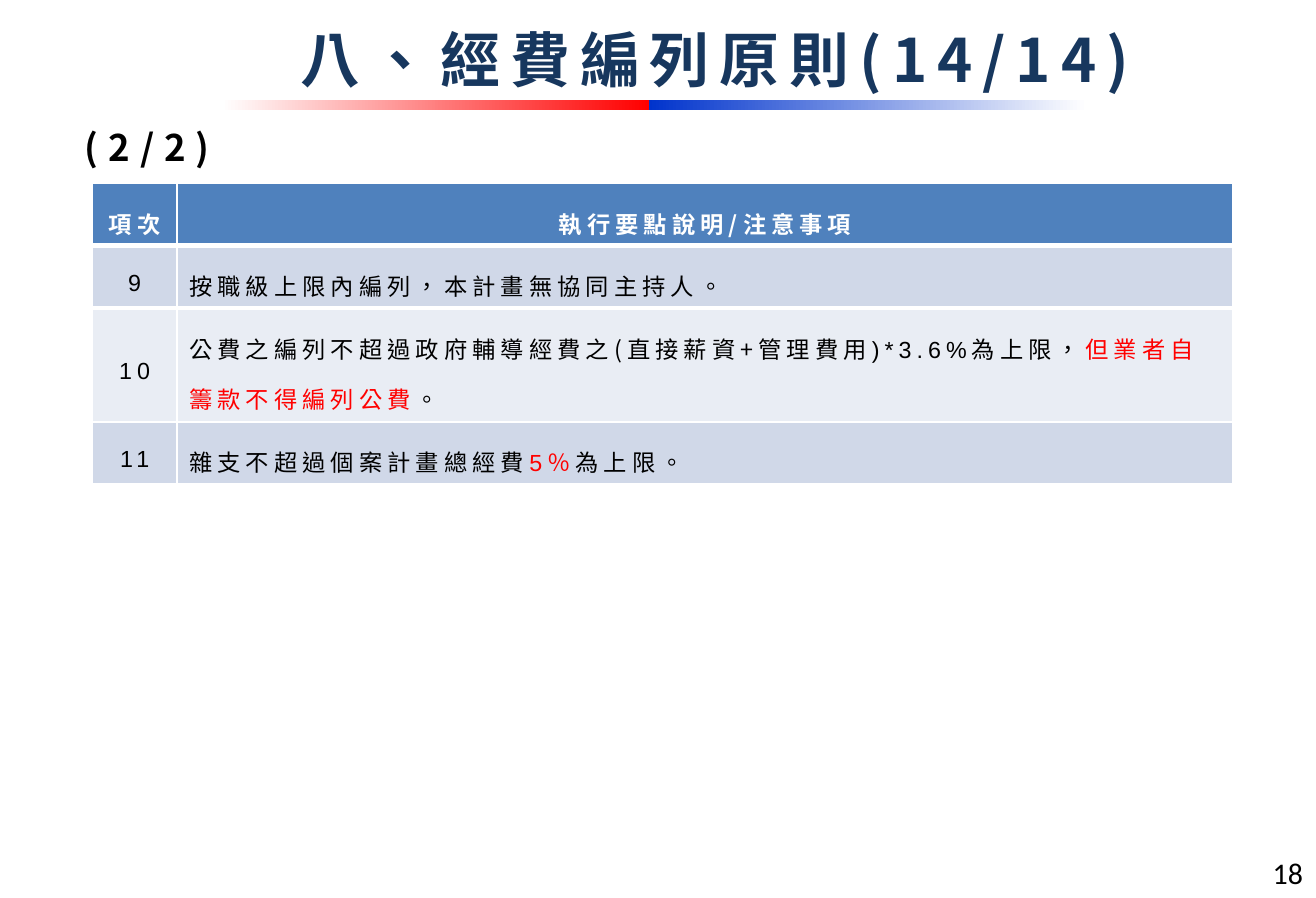
import pptx
import pptx.dml.color
import pptx.enum.shapes
import pptx.enum.text
import pptx.oxml
import pptx.oxml.ns
import pptx.util

Pt = pptx.util.Pt
ALIGN = pptx.enum.text.PP_ALIGN
ANCHOR = pptx.enum.text.MSO_ANCHOR
SPACE = pptx.oxml.ns.nsdecls("a")
HAN, LATIN = "Noto Sans CJK SC", "Arial"
BLACK, WHITE, RED = "000000", "FFFFFF", "FF0000"
HEAD, BANDS = "4F81BD", ("D0D8E8", "E9EDF4")
HIGHS = (37.5, 37.5, 68.5, 37.5)

ROWS = [
    ("9", [("按職級上限內編列，本計畫無協同主持人。", HAN, BLACK)]),
    ("10", [("公費之編列不超過政府輔導經費之(直接薪資+管理費用", HAN, BLACK),
            (")*3.6%", LATIN, BLACK),
            ("為上限，", HAN, BLACK),
            ("但業者自籌款不得編列公費", HAN, RED),
            ("。", HAN, BLACK)]),
    ("11", [("雜支不超過個案計畫總經費", HAN, BLACK),
            ("5％", LATIN, RED),
            ("為上限。", HAN, BLACK)]),
]


def paint(target, color):
    target.rgb = pptx.dml.color.RGBColor.from_string(color)


def style(font, name, color, size=None, bold=None, gap=None):
    """Set face, colour, size and letter gap (points) on a font."""
    font.size, font.bold, font.name = size and Pt(size), bold, name
    font.fill.solid()
    paint(font.fill.fore_color, color)
    props = font._rPr
    props.set("lang", "zh-TW")
    if gap:
        props.set("spc", str(gap * 100))
    face = pptx.oxml.parse_xml(f'<a:ea {SPACE} typeface="{name}"/>')
    props.find(pptx.oxml.ns.qn("a:latin")).addnext(face)


def place(shape, left, top, width, height):
    shape.left, shape.top = Pt(left), Pt(top)
    shape.width, shape.height = Pt(width), Pt(height)


# Title in its placeholder
def add_title(slide, box):
    title = slide.shapes.title
    place(title, *box)
    frame = title.text_frame
    frame.text = "八、經費編列原則(14/14)"
    frame.vertical_anchor = ANCHOR.BOTTOM
    frame.auto_size = pptx.enum.text.MSO_AUTO_SIZE.NONE
    line = frame.paragraphs[0]
    line.alignment = ALIGN.CENTER
    style(line.font, HAN, "17375E", 36, True, 6)


# Two-colour rule below the title, fading out at both ends
def add_rule(slide, box):
    left, top, width, height = box
    mid = 257
    halves = [(left, mid, (WHITE, RED)),
              (left + mid, width - mid, ("0033CC", WHITE))]
    for start, span, colors in halves:
        bar = slide.shapes.add_shape(
            pptx.enum.shapes.MSO_SHAPE.RECTANGLE,
            Pt(start), Pt(top), Pt(span), Pt(height))
        bar.shadow.inherit = False
        bar.line.fill.background()
        bar.fill.gradient()
        bar.fill.gradient_angle = 0
        for stop, color in zip(bar.fill.gradient_stops, colors):
            paint(stop.color, color)


# Single-line label
def add_label(slide, box, text, name, size, bold, gap, align, wrap):
    label = slide.shapes.add_textbox(*map(Pt, box))
    label.text_frame.word_wrap = wrap
    line = label.text_frame.paragraphs[0]
    line.text, line.alignment = text, align
    style(line.font, name, BLACK, size, bold, gap)


def fill_cell(cell, color, runs, align, anchor, bold=False):
    cell.fill.solid()
    paint(cell.fill.fore_color, color)
    cell.vertical_anchor = anchor
    line = cell.text_frame.paragraphs[0]
    line.alignment, line.line_spacing = align, 1.5
    style(line.font, runs[0][1], runs[0][2], 14, bold, 3)
    for text, name, ink in runs:
        run = line.add_run()
        run.text = text
        if len(runs) > 1:
            style(run.font, name, ink)


def add_edge(cell, side, width):
    edge = pptx.oxml.parse_xml(
        f'<a:{side} {SPACE} w="{Pt(width)}"><a:solidFill>'
        f'<a:srgbClr val="{WHITE}"/></a:solidFill></a:{side}>')
    cell._tc.get_or_add_tcPr().insert(0, edge)


# Table of numbered rules
def add_rules(slide, box):
    left, top, width = box
    table = slide.shapes.add_table(
        len(HIGHS), 2, Pt(left), Pt(top), Pt(width), Pt(sum(HIGHS))).table
    first = 51
    table.columns[0].width = Pt(first)
    table.columns[1].width = Pt(width - first)
    for row, high in zip(table.rows, HIGHS):
        row.height = Pt(high)
    for col, text in enumerate(("項次", "執行要點說明/注意事項")):
        fill_cell(table.cell(0, col), HEAD, [(text, HAN, WHITE)],
                  ALIGN.CENTER, ANCHOR.TOP, True)
    for row, (num, runs) in enumerate(ROWS, 1):
        band = BANDS[(row - 1) % 2]
        fill_cell(table.cell(row, 0), band, [(num, LATIN, BLACK)],
                  ALIGN.CENTER, ANCHOR.MIDDLE)
        fill_cell(table.cell(row, 1), band, runs, ALIGN.LEFT, ANCHOR.TOP)
    # Thick line under the header
    for col in range(2):
        add_edge(table.cell(0, col), "lnB", 3)
        add_edge(table.cell(1, col), "lnT", 3)


def main():
    deck = pptx.Presentation()
    deck.slide_width, deck.slide_height = Pt(791.3), Pt(540)
    slide = deck.slides.add_slide(deck.slide_layouts[5])
    add_rule(slide, (133.2, 60.3, 520.5, 6))
    add_label(slide, (638.6, 510.5, 152, 29.5), "18", "Calibri", 18,
              False, 0, ALIGN.RIGHT, True)
    add_title(slide, (152, 5, 556, 55.5))
    add_rules(slide, (55.5, 110.2, 686))
    add_label(slide, (44, 71.3, 96.5, 34), "(2/2)", HAN, 22,
              True, 6, ALIGN.LEFT, False)
    deck.save("out.pptx")


if __name__ == "__main__":
    main()
